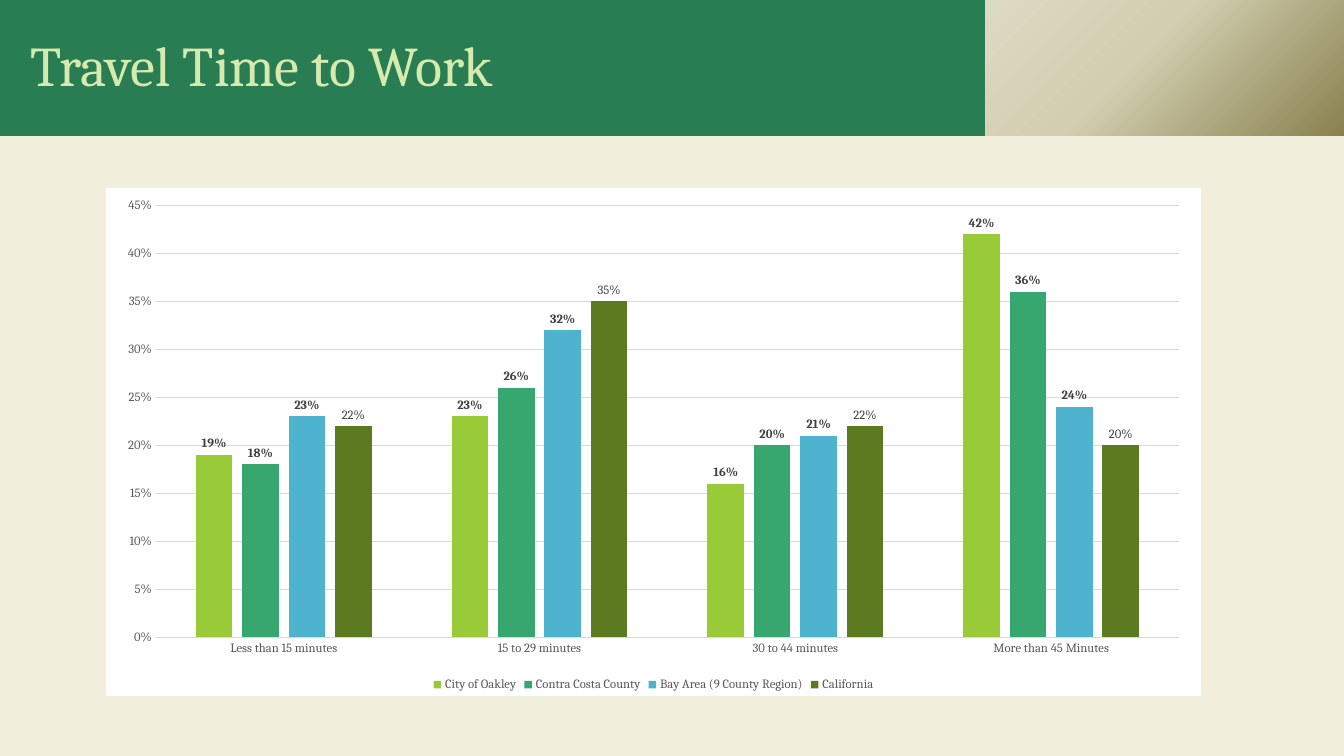
from lxml import etree
from pptx import Presentation
from pptx.chart.data import CategoryChartData
from pptx.dml.color import RGBColor
from pptx.enum.chart import XL_CHART_TYPE, XL_LABEL_POSITION, XL_LEGEND_POSITION, XL_TICK_MARK
from pptx.enum.shapes import MSO_SHAPE
from pptx.enum.text import MSO_ANCHOR, MSO_AUTO_SIZE, PP_ALIGN
from pptx.oxml import parse_xml
from pptx.oxml.ns import nsdecls, qn
from pptx.util import Emu, Pt

COLUMNS = XL_CHART_TYPE.COLUMN_CLUSTERED
OUTSIDE = XL_LABEL_POSITION.OUTSIDE_END
BOTTOM = XL_LEGEND_POSITION.BOTTOM
NO_TICK = XL_TICK_MARK.NONE
RECTANGLE = MSO_SHAPE.RECTANGLE
MIDDLE = MSO_ANCHOR.MIDDLE
NO_FIT = MSO_AUTO_SIZE.NONE
LEFT = PP_ALIGN.LEFT

FONT = "Cambria"
COLORS = {
    "page": "F1EFDC", "banner": "297D53", "title": "D6EAAF",
    "sand_dark": "89814E", "sand": "D2CEB1", "sand_light": "E2DFCC",
    "panel": "FFFFFF", "axis_text": "595959", "label": "404040", "grid": "D9D9D9",
    "oakley": "99CB38", "county": "37A76F", "bay": "4EB3CF", "state": "5C7B20",
}
COMMUTE_TIMES = ["Less than 15 minutes", "15 to 29 minutes",
                 "30 to 44 minutes", "More than 45 Minutes"]
REGIONS = [
    ("City of Oakley", "oakley", True, (0.19, 0.23, 0.16, 0.42)),
    ("Contra Costa County", "county", True, (0.18, 0.26, 0.20, 0.36)),
    ("Bay Area (9 County Region)", "bay", True, (0.23, 0.32, 0.21, 0.24)),
    ("California", "state", False, (0.22, 0.35, 0.22, 0.20)),
]


def px(length):
    return Emu(round(length * 914400 / 100.8))


def rgb(name):
    return RGBColor.from_string(COLORS[name])


class SlideBuilder:
    """Holds the slide and draws each kind of element in its style."""

    def __init__(self, slide):
        self.slide = slide

    def background(self, color):
        self.paint(self.slide.background.fill, color)

    def paint(self, fill, color):
        fill.solid()
        fill.fore_color.rgb = rgb(color)

    def style_font(self, font, size, color, bold=False):
        font.name = FONT
        font.size = Pt(size)
        font.bold = bold
        font.color.rgb = rgb(color)

    def place(self, shape, left, top, width, height):
        shape.left, shape.top = px(left), px(top)
        shape.width, shape.height = px(width), px(height)

    def title(self, text, *box):
        title = self.slide.shapes.title
        self.place(title, *box)
        self.paint(title.fill, "banner")
        frame = title.text_frame
        frame.text = text
        frame.auto_size = NO_FIT
        frame.vertical_anchor = MIDDLE
        frame.margin_left = px(30)
        heading = frame.paragraphs[0]
        heading.alignment = LEFT
        heading.line_spacing = 0.9
        self.style_font(heading.font, 40, "title")

    def corner_glow(self, stops, *box):
        corner = self.slide.shapes.add_shape(RECTANGLE, *map(px, box))
        corner.shadow.inherit = False
        corner.line.fill.background()
        stop_xml = "".join(
            f'<a:gs pos="{percent * 1000}"><a:srgbClr val="{COLORS[color]}"/></a:gs>'
            for percent, color in stops)
        gradient = parse_xml(
            f'<a:gradFill {nsdecls("a")} rotWithShape="1"><a:gsLst>{stop_xml}</a:gsLst>'
            '<a:path path="circle"><a:fillToRect l="100000" t="100000"/></a:path></a:gradFill>')
        corner._element.spPr.find(qn("a:prstGeom")).addnext(gradient)
        self.slide.shapes.title._element.addprevious(corner._element)

    def axis(self, axis):
        axis.major_tick_mark = axis.minor_tick_mark = NO_TICK
        self.style_font(axis.tick_labels.font, 9, "axis_text")

    def hairline(self, line):
        line.color.rgb = rgb("grid")
        line.width = Pt(0.75)

    def column_chart(self, categories, regions, *box):
        data = CategoryChartData(number_format="0%")
        data.categories = categories
        for name, _, _, shares in regions:
            data.add_series(name, shares)
        chart = self.slide.shapes.add_chart(COLUMNS, *map(px, box), data).chart
        chart.has_title = False
        chart.font.name = FONT
        chart.font.size = Pt(10)

        panel = etree.Element(qn("c:spPr"))
        panel.append(parse_xml(f'<a:solidFill {nsdecls("a")}>'
                               f'<a:srgbClr val="{COLORS["panel"]}"/></a:solidFill>'))
        etree.SubElement(etree.SubElement(panel, qn("a:ln")), qn("a:noFill"))
        chart._chartSpace.find(qn("c:chart")).addnext(panel)

        self.axis(chart.category_axis)
        self.hairline(chart.category_axis.format.line)
        shares_axis = chart.value_axis
        self.axis(shares_axis)
        shares_axis.format.line.fill.background()
        self.hairline(shares_axis.major_gridlines.format.line)
        shares_axis.minimum_scale = 0
        shares_axis.maximum_scale = 0.45
        shares_axis.major_unit = 0.05
        shares_axis.tick_labels.number_format = "0%"
        shares_axis.tick_labels.number_format_is_linked = False

        chart.has_legend = True
        chart.legend.position = BOTTOM
        chart.legend.include_in_layout = False
        self.style_font(chart.legend.font, 9, "axis_text")

        plot = chart.plots[0]
        plot.gap_width = 219
        plot.overlap = -27
        plot.vary_by_categories = False
        for series, (_, color, bold, _) in zip(plot.series, regions):
            self.paint(series.format.fill, color)
            labels = series.data_labels
            labels.show_value = True
            labels.position = OUTSIDE
            labels.number_format = "0%"
            labels.number_format_is_linked = False
            self.style_font(labels.font, 9, "label", bold)


def main():
    deck = Presentation()
    deck.slide_width, deck.slide_height = px(1344), px(756)
    builder = SlideBuilder(deck.slides.add_slide(deck.slide_layouts[5]))
    builder.background("page")
    builder.title("Travel Time to Work", 0, 0, 985, 136)
    builder.corner_glow([(0, "sand_dark"), (50, "sand"), (100, "sand_light")],
                        906, 0, 438, 136)
    builder.column_chart(COMMUTE_TIMES, REGIONS, 106, 188, 1095, 508)
    deck.save("out.pptx")


if __name__ == "__main__":
    main()
